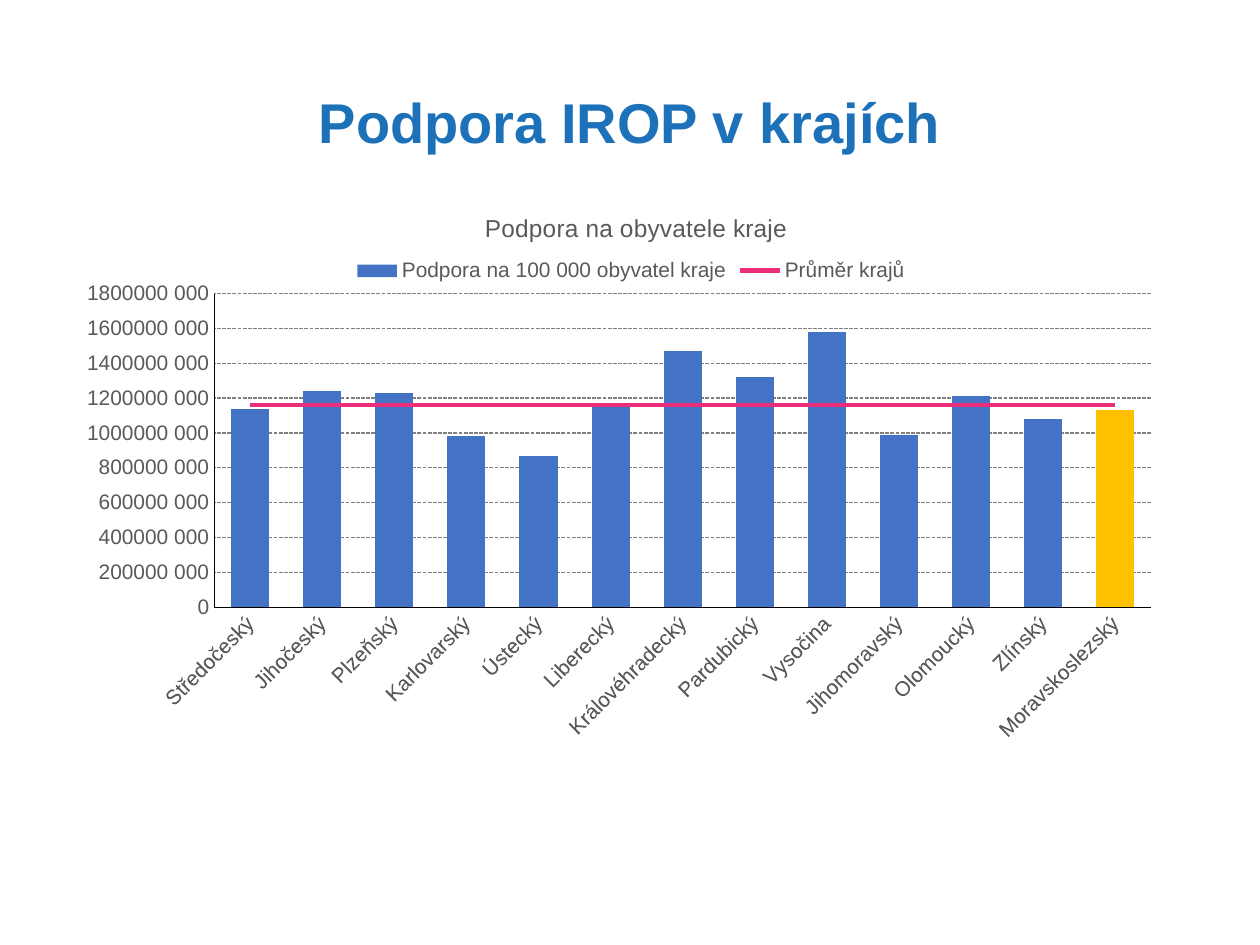
import pptx
import pptx.chart.data
import pptx.dml.color
import pptx.enum.chart
import pptx.enum.dml
import pptx.enum.text
import pptx.oxml
import pptx.oxml.ns
import pptx.util

qn = pptx.oxml.ns.qn
SCALE = 914400 / 126  # EMU in one px

# Colours and type sizes
THEME = {
    "font": "Arial", "head": "1D71B8", "text": "595959", "axis": "000000",
    "grid": "808080", "bar": "4472C4", "mark": "FFC000", "mean": "EA2E7A",
    "big": 32, "mid": 14, "small": 12, "thin": 0.75, "thick": 2.75,
}

# Support per 100 000 people, in millions
DATA = {
    "Středočeský": 1140, "Jihočeský": 1240, "Plzeňský": 1230,
    "Karlovarský": 980, "Ústecký": 870, "Liberecký": 1150,
    "Královéhradecký": 1470, "Pardubický": 1320, "Vysočina": 1580,
    "Jihomoravský": 990, "Olomoucký": 1210, "Zlínský": 1080,
    "Moravskoslezský": 1130,
}
MEAN = 1160
UNIT = 10 ** 6


def px(num):
    return pptx.util.Emu(round(num * SCALE))


def rgb(name):
    return pptx.dml.color.RGBColor.from_string(THEME[name])


def apply(obj, form):
    for key, val in form.items():
        setattr(obj, key, val)


def style(font, color="text", size="small", bold=False):
    apply(font, {"name": THEME["font"], "size": pptx.util.Pt(THEME[size]),
                 "bold": bold})
    font.color.rgb = rgb(color)


def stroke(line, color, width="thin"):
    line.color.rgb = rgb(color)
    line.width = pptx.util.Pt(THEME[width])


def paint(part, color):
    part.format.fill.solid()
    part.format.fill.fore_color.rgb = rgb(color)


def place(node, spot, mode="", **frac):
    """Give a chart part a fixed layout, as fractions of the chart."""
    for old in node.findall(qn("c:layout")):
        node.remove(old)
    lay = pptx.oxml.parse_xml(
        f'<c:layout {pptx.oxml.ns.nsdecls("c")}><c:manualLayout/></c:layout>')
    rows = [("layoutTarget", mode)] if mode else []
    rows += [("xMode", "edge"), ("yMode", "edge"), *frac.items()]
    for tag, val in rows:
        lay[0].makeelement(qn("c:" + tag))
        item = pptx.oxml.parse_xml(
            f'<c:{tag} {pptx.oxml.ns.nsdecls("c")} val="{val}"/>')
        lay[0].append(item)
    node.insert(spot, lay)


def add_head(slide, text):
    head = slide.shapes.title
    apply(head, {"left": px(87), "top": px(34),
                 "width": px(1086), "height": px(183)})
    frame = head.text_frame
    apply(frame, {"text": text, "word_wrap": True,
                  "auto_size": pptx.enum.text.MSO_AUTO_SIZE.NONE,
                  "vertical_anchor": pptx.enum.text.MSO_ANCHOR.MIDDLE})
    para = frame.paragraphs[0]
    apply(para, {"alignment": pptx.enum.text.PP_ALIGN.CENTER,
                 "line_spacing": 0.9})
    style(para.runs[0].font, "head", "big", True)


def split_line(chart):
    """Move the last bar series to a line plot on the same axes."""
    bars = chart.plots[0]._element
    ser = bars.findall(qn("c:ser"))[-1]
    for flag in ser.findall(qn("c:invertIfNegative")):
        ser.remove(flag)
    plot = pptx.oxml.parse_xml(
        f'<c:lineChart {pptx.oxml.ns.nsdecls("c")}>'
        '<c:grouping val="standard"/><c:varyColors val="0"/>'
        '<c:marker val="1"/></c:lineChart>')
    plot.insert(2, ser)
    for axis in bars.findall(qn("c:axId")):
        plot.append(pptx.oxml.parse_xml(
            f'<c:axId {pptx.oxml.ns.nsdecls("c")} val="{axis.get("val")}"/>'))
    bars.addnext(plot)


def style_axes(chart):
    none = pptx.enum.chart.XL_TICK_MARK.NONE
    cat, val = chart.category_axis, chart.value_axis
    for axis in (cat, val):
        apply(axis, {"major_tick_mark": none, "minor_tick_mark": none})
        style(axis.tick_labels.font)
        stroke(axis.format.line, "axis")
    body = cat._element.find(qn("c:txPr")).find(qn("a:bodyPr"))
    body.set("rot", "-2700000")
    apply(val, {"minimum_scale": 0, "maximum_scale": 1800 * UNIT,
                "major_unit": 200 * UNIT, "has_major_gridlines": True})
    apply(val.tick_labels, {"number_format": "#\\ ##0",
                            "number_format_is_linked": False})
    grid = val.major_gridlines.format.line
    stroke(grid, "grid")
    grid.dash_style = pptx.enum.dml.MSO_LINE.SQUARE_DOT


def style_series(chart):
    bars, mean = chart.plots
    apply(bars, {"gap_width": 89, "vary_by_categories": False})
    paint(bars.series[0], "bar")
    paint(bars.series[0].points[len(DATA) - 1], "mark")
    line = mean.series[0]
    line.smooth = False
    line.marker.style = pptx.enum.chart.XL_MARKER_STYLE.NONE
    stroke(line.format.line, "mean", "thick")


def add_chart(slide):
    data = pptx.chart.data.CategoryChartData()
    data.categories = list(DATA)
    data.add_series("Podpora na 100 000 obyvatel kraje",
                    [num * UNIT for num in DATA.values()])
    data.add_series("Průměr krajů", [MEAN * UNIT] * len(DATA))
    chart = slide.shapes.add_chart(
        pptx.enum.chart.XL_CHART_TYPE.COLUMN_CLUSTERED,
        px(87), px(185), px(1086), px(581), data).chart
    style(chart.font)
    split_line(chart)
    style_axes(chart)
    style_series(chart)

    # Chart title
    title = chart.chart_title
    title.text_frame.text = "Podpora na obyvatele kraje"
    style(title.text_frame.paragraphs[0].runs[0].font, size="mid")
    place(title._element, 1, x=0.36, y=0.04)

    # Legend
    chart.has_legend = True
    apply(chart.legend, {"position": pptx.enum.chart.XL_LEGEND_POSITION.TOP,
                         "include_in_layout": False})
    style(chart.legend.font)
    place(chart.legend._element, 1, x=0.24, y=0.12)

    # Plot area
    area = chart.plots[0]._element.getparent()
    place(area, 0, "inner", x=0.114, y=0.187, w=0.866, h=0.54)


def main():
    deck = pptx.Presentation()
    apply(deck, {"slide_width": px(1260), "slide_height": px(945)})
    slide = deck.slides.add_slide(deck.slide_layouts[5])
    add_head(slide, "Podpora IROP v krajích")
    add_chart(slide)
    deck.save("out.pptx")


if __name__ == "__main__":
    main()
